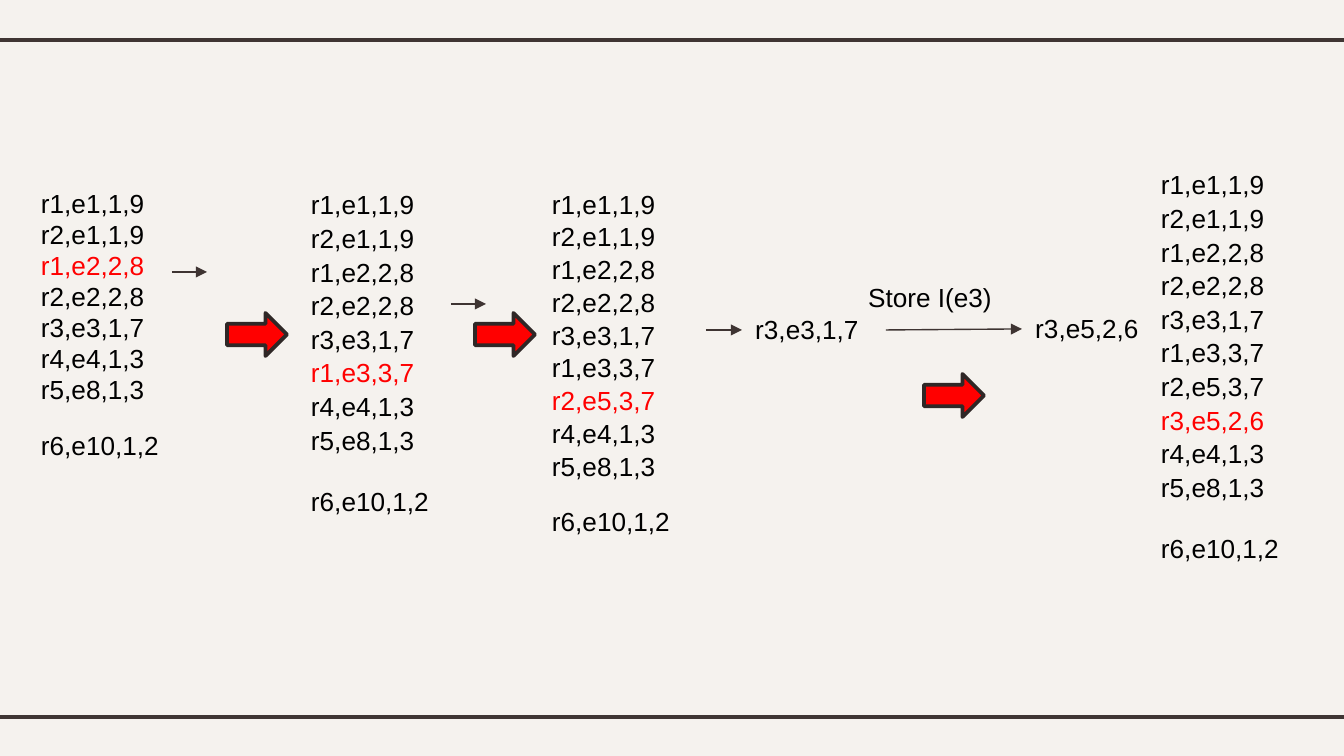
import pptx
import pptx.dml.color
import pptx.enum.shapes
import pptx.enum.text
import pptx.oxml.ns
import pptx.util
from lxml import etree

PX = 9144000 / 1344
BACKGROUND = pptx.dml.color.RGBColor(0xF5, 0xF2, 0xEE)
RULE = pptx.dml.color.RGBColor(0x3F, 0x35, 0x33)
THIN_LINE = pptx.dml.color.RGBColor(0x3E, 0x34, 0x32)
ARROW_EDGE = pptx.dml.color.RGBColor(0x2F, 0x27, 0x26)
RED = pptx.dml.color.RGBColor(0xFF, 0, 0)
BLACK = pptx.dml.color.RGBColor(0, 0, 0)
NO_GRID_STYLE = "{2D5ABB26-0587-4C30-8999-92F81FD0307C}"


def emu(*lengths):
    """Turn px lengths into EMU."""
    return [round(length * PX) for length in lengths]


def add_line(ends, color, width, arrowhead=False):
    line = slide.shapes.add_connector(
        pptx.enum.shapes.MSO_CONNECTOR.STRAIGHT, *emu(*ends))
    line.line.color.rgb = color
    line.line.width = pptx.util.Pt(width)
    if arrowhead:
        etree.SubElement(line.line._get_or_add_ln(),
                         pptx.oxml.ns.qn("a:tailEnd"), type="triangle")
    etree.SubElement(line._element.spPr, pptx.oxml.ns.qn("a:effectLst"))
    return line


presentation = pptx.Presentation()
presentation.slide_width, presentation.slide_height = emu(1344, 756)
slide = presentation.slides.add_slide(presentation.slide_layouts[6])
slide.background.fill.solid()
slide.background.fill.fore_color.rgb = BACKGROUND

for y in (40, 717):
    add_line((0, y, 1344, y), RULE, 2.25)

# Each step inserts one new (red) record into the sorted list:
# left, top, width, height of the even rows, height of the last row, new, records
steps = [
    (40, 188, 129, 217, 56, "r1,e2,2,8",
     "r1,e1,1,9 r2,e1,1,9 r1,e2,2,8 r2,e2,2,8 r3,e3,1,7 "
     "r4,e4,1,3 r5,e8,1,3 r6,e10,1,2"),
    (310, 187, 129, 269, 61, "r1,e3,3,7",
     "r1,e1,1,9 r2,e1,1,9 r1,e2,2,8 r2,e2,2,8 r3,e3,1,7 r1,e3,3,7 "
     "r4,e4,1,3 r5,e8,1,3 r6,e10,1,2"),
    (551, 187, 145, 295, 55, "r2,e5,3,7",
     "r1,e1,1,9 r2,e1,1,9 r1,e2,2,8 r2,e2,2,8 r3,e3,1,7 r1,e3,3,7 "
     "r2,e5,3,7 r4,e4,1,3 r5,e8,1,3 r6,e10,1,2"),
    (1160, 167, 129, 336, 61, "r3,e5,2,6",
     "r1,e1,1,9 r2,e1,1,9 r1,e2,2,8 r2,e2,2,8 r3,e3,1,7 r1,e3,3,7 "
     "r2,e5,3,7 r3,e5,2,6 r4,e4,1,3 r5,e8,1,3 r6,e10,1,2"),
]
for left, top, width, even_height, last_height, new_record, listing in steps:
    records = listing.split()
    last = len(records) - 1
    frame = slide.shapes.add_table(
        len(records), 1, *emu(left, top, width, even_height + last_height))
    table = frame.table
    table.first_row = table.horz_banding = False
    table._tbl.tblPr.find(pptx.oxml.ns.qn("a:tableStyleId")).text = NO_GRID_STYLE
    for index, record in enumerate(records):
        height = last_height if index == last else even_height / last
        table.rows[index].height = emu(height)[0]
        cell = table.cell(index, 0)
        cell.fill.background()
        cell.vertical_anchor = pptx.enum.text.MSO_ANCHOR.BOTTOM
        cell.margin_left = cell.margin_top = cell.margin_right = emu(1)[0]
        cell.margin_bottom = 0
        cell.text = record
        font = cell.text_frame.paragraphs[0].font
        font.name = "Arial"
        font.size = pptx.util.Pt(14)
        font.color.rgb = RED if record == new_record else BLACK

for left, top in ((227, 313), (475, 313), (924, 374)):
    arrow = slide.shapes.add_shape(
        pptx.enum.shapes.MSO_SHAPE.RIGHT_ARROW, *emu(left, top, 60, 43))
    arrow.shadow.inherit = False
    arrow.fill.solid()
    arrow.fill.fore_color.rgb = RED
    arrow.line.color.rgb = ARROW_EDGE
    arrow.line.width = pptx.util.Pt(2)

labels = {}
for text, left, top, width in (("r3,e3,1,7", 742, 307, 144),
                               ("Store I(e3)", 855, 275, 153),
                               ("r3,e5,2,6", 1022, 306, 144)):
    label = slide.shapes.add_textbox(*emu(left, top, width, 46))
    label.text_frame.word_wrap = True
    label.text_frame.text = text
    font = label.text_frame.paragraphs[0].font
    font.name = "Arial"
    font.size = pptx.util.Pt(14)
    font.color.rgb = BLACK
    labels[text] = label

for left, y in ((172, 272), (451, 304)):
    add_line((left, y, left + 35, y), THIN_LINE, 0.75, arrowhead=True)
read_arrow = add_line((706, 330, 742, 330), THIN_LINE, 0.75, arrowhead=True)
read_arrow.end_connect(labels["r3,e3,1,7"], 1)
store_arrow = add_line((886, 330, 1022, 329), THIN_LINE, 0.75, arrowhead=True)
store_arrow.begin_connect(labels["r3,e3,1,7"], 3)
store_arrow.end_connect(labels["r3,e5,2,6"], 1)

presentation.save("out.pptx")
